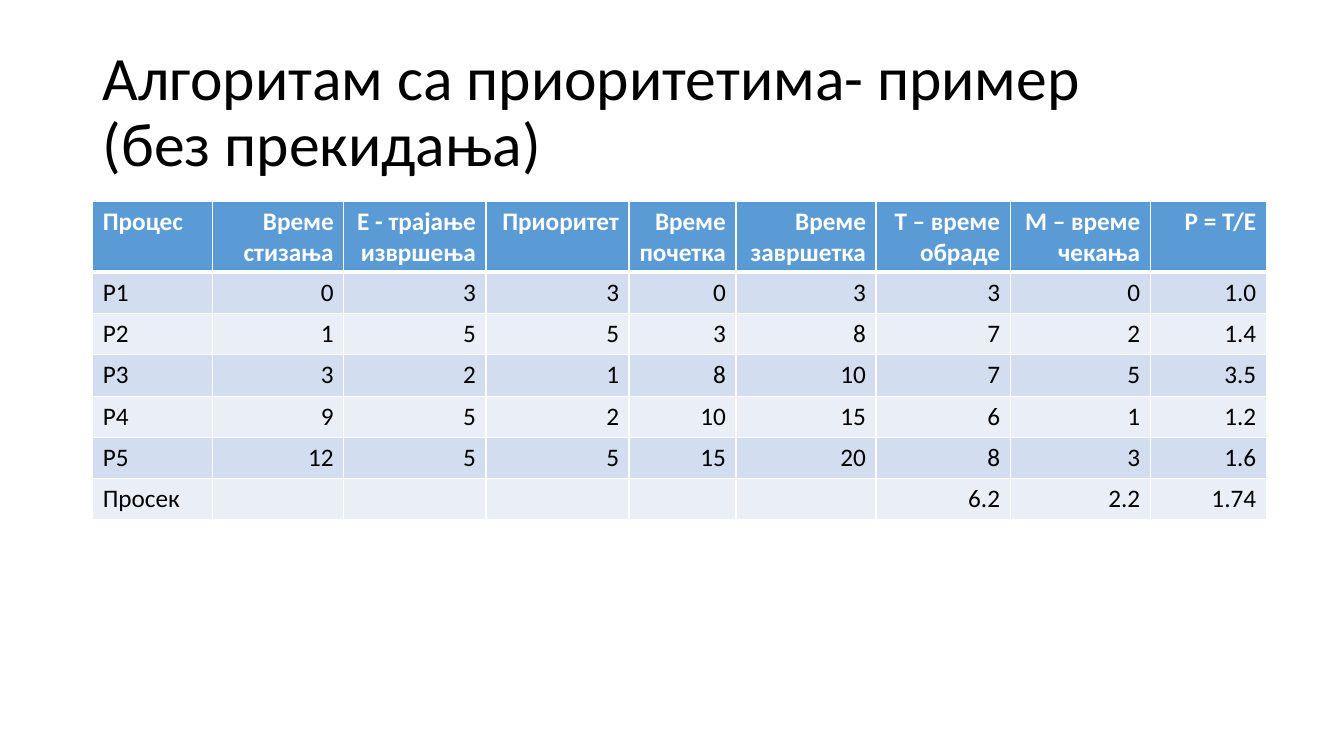
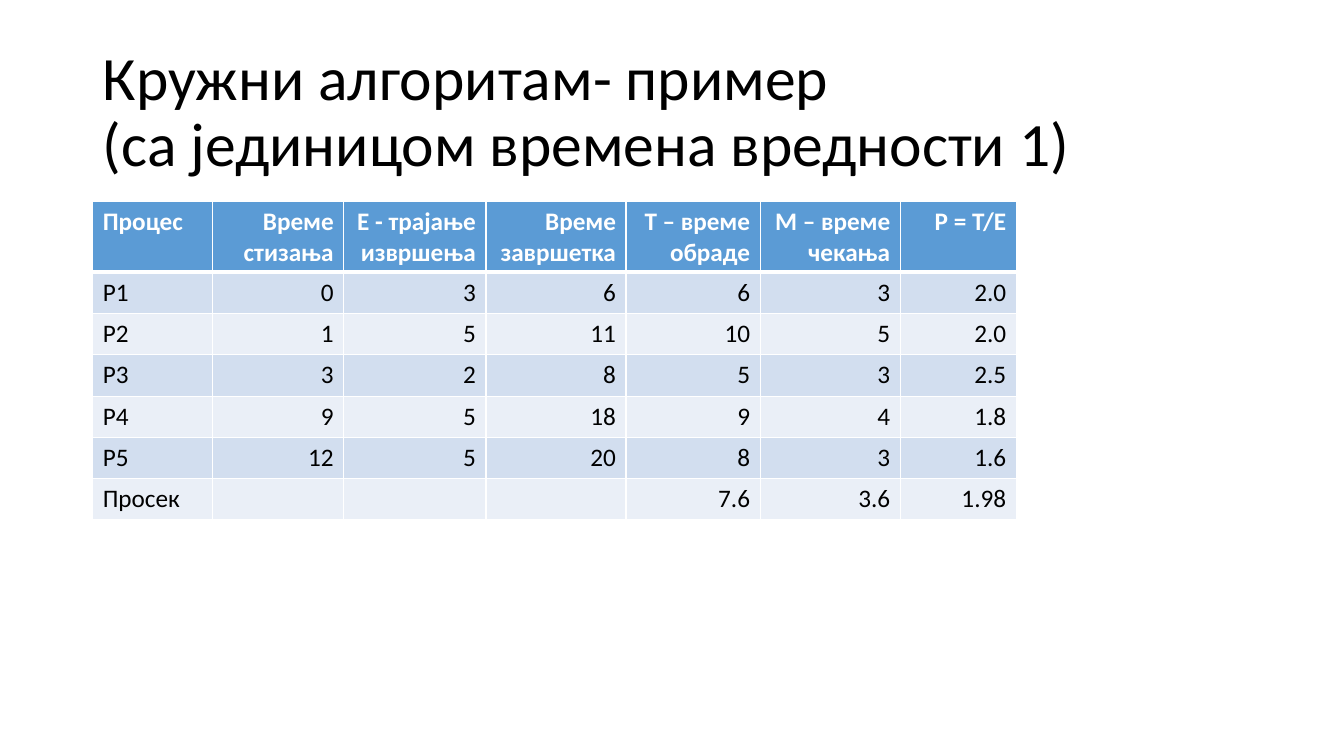
from lxml import etree
from pptx import Presentation
from pptx import util as u
from pptx.dml.color import RGBColor
from pptx.enum import text
from pptx.oxml import ns

BLACK = RGBColor(0x00, 0x00, 0x00)
WHITE = RGBColor(0xFF, 0xFF, 0xFF)
HEADER_BLUE = RGBColor(0x5B, 0x9B, 0xD5)
BAND_DARK = RGBColor(0xD2, 0xDE, 0xEF)
BAND_LIGHT = RGBColor(0xEA, 0xEF, 0xF7)

COLUMN_WIDTHS = {
    "Процес": 1.19,
    "Време стизања": 1.3,
    "E - трајање извршења": 1.41,
    "Приоритет": 1.42,
    "Време почетка": 1.06,
    "Време завршетка": 1.39,
    "T – време обраде": 1.33,
    "M – време чекања": 1.39,
    "P = T/Е": 1.15,
}
ALL_COLUMNS = list(COLUMN_WIDTHS)
ROUND_ROBIN_COLUMNS = [
    name for name in ALL_COLUMNS if name not in ("Приоритет", "Време почетка")
]

PRIORITY_ROWS = [
    ("P1", "0", "3", "3", "0", "3", "3", "0", "1.0"),
    ("P2", "1", "5", "5", "3", "8", "7", "2", "1.4"),
    ("P3", "3", "2", "1", "8", "10", "7", "5", "3.5"),
    ("P4", "9", "5", "2", "10", "15", "6", "1", "1.2"),
    ("P5", "12", "5", "5", "15", "20", "8", "3", "1.6"),
    ("Просек", "", "", "", "", "", "6.2", "2.2", "1.74"),
]
ROUND_ROBIN_ROWS = [
    ("P1", "0", "3", "6", "6", "3", "2.0"),
    ("P2", "1", "5", "11", "10", "5", "2.0"),
    ("P3", "3", "2", "8", "5", "3", "2.5"),
    ("P4", "9", "5", "18", "9", "4", "1.8"),
    ("P5", "12", "5", "20", "8", "3", "1.6"),
    ("Просек", "", "", "", "7.6", "3.6", "1.98"),
]


class Deck:
    font_name = "Calibri"
    left = 0.92
    header_height = 0.67
    row_height = 0.41

    def __init__(self):
        self.presentation = Presentation()
        self.presentation.slide_width = u.Inches(13.33)
        self.presentation.slide_height = u.Inches(7.5)
        self.slide = None

    def add_slide(self):
        blank_layout = self.presentation.slide_layouts[6]
        self.slide = self.presentation.slides.add_slide(blank_layout)

    def format_runs(self, paragraph, size, color, bold=False):
        for run in paragraph.runs:
            run.font.name = self.font_name
            run.font.size = u.Pt(size)
            run.font.color.rgb = color
            run.font.bold = bold

    def add_title(self, title):
        box = self.slide.shapes.add_textbox(
            u.Inches(self.left), u.Inches(0.4), u.Inches(11.5), u.Inches(1.45)
        )
        frame = box.text_frame
        frame.word_wrap = True
        frame.vertical_anchor = text.MSO_ANCHOR.MIDDLE
        frame.text = title
        paragraph = frame.paragraphs[0]
        paragraph.line_spacing = 0.9
        self.format_runs(paragraph, 44, BLACK)

    def add_borders(self, cell, top, bottom):
        properties = cell._tc.get_or_add_tcPr()
        widths = {"lnL": 1, "lnR": 1, "lnT": top, "lnB": bottom}
        for position, (side, width) in enumerate(widths.items()):
            line = etree.Element(ns.qn(f"a:{side}"), w=str(u.Pt(width)))
            fill = etree.SubElement(line, ns.qn("a:solidFill"))
            etree.SubElement(fill, ns.qn("a:srgbClr"), val=str(WHITE))
            properties.insert(position, line)

    def fill_cell(self, cell, value, row, column):
        is_header = row == 0
        cell.fill.solid()
        if is_header:
            cell.fill.fore_color.rgb = HEADER_BLUE
        else:
            cell.fill.fore_color.rgb = BAND_DARK if row % 2 else BAND_LIGHT
        self.add_borders(cell, top=3 if row == 1 else 1, bottom=3 if is_header else 1)
        paragraph = cell.text_frame.paragraphs[0]
        paragraph.text = value
        paragraph.alignment = text.PP_ALIGN.RIGHT if column else text.PP_ALIGN.LEFT
        self.format_runs(paragraph, 18, WHITE if is_header else BLACK, is_header)

    def add_table(self, columns, rows):
        widths = [COLUMN_WIDTHS[name] for name in columns]
        heights = [self.header_height] + [self.row_height] * len(rows)
        table = self.slide.shapes.add_table(
            len(heights), len(widths), u.Inches(self.left), u.Inches(2),
            u.Inches(sum(widths)), u.Inches(sum(heights)),
        ).table
        for table_column, width in zip(table.columns, widths):
            table_column.width = u.Inches(width)
        for table_row, height in zip(table.rows, heights):
            table_row.height = u.Inches(height)
        for row, values in enumerate([columns, *rows]):
            for column, value in enumerate(values):
                self.fill_cell(table.cell(row, column), value, row, column)


def main():
    deck = Deck()
    for title, columns, rows in (
        ("Алгоритам са приоритетима- пример\v(без прекидања)",
         ALL_COLUMNS, PRIORITY_ROWS),
        ("Кружни алгоритам- пример\v(са јединицом времена вредности 1)",
         ROUND_ROBIN_COLUMNS, ROUND_ROBIN_ROWS),
    ):
        deck.add_slide()
        deck.add_title(title)
        deck.add_table(columns, rows)
    deck.presentation.save("out.pptx")


if __name__ == "__main__":
    main()
